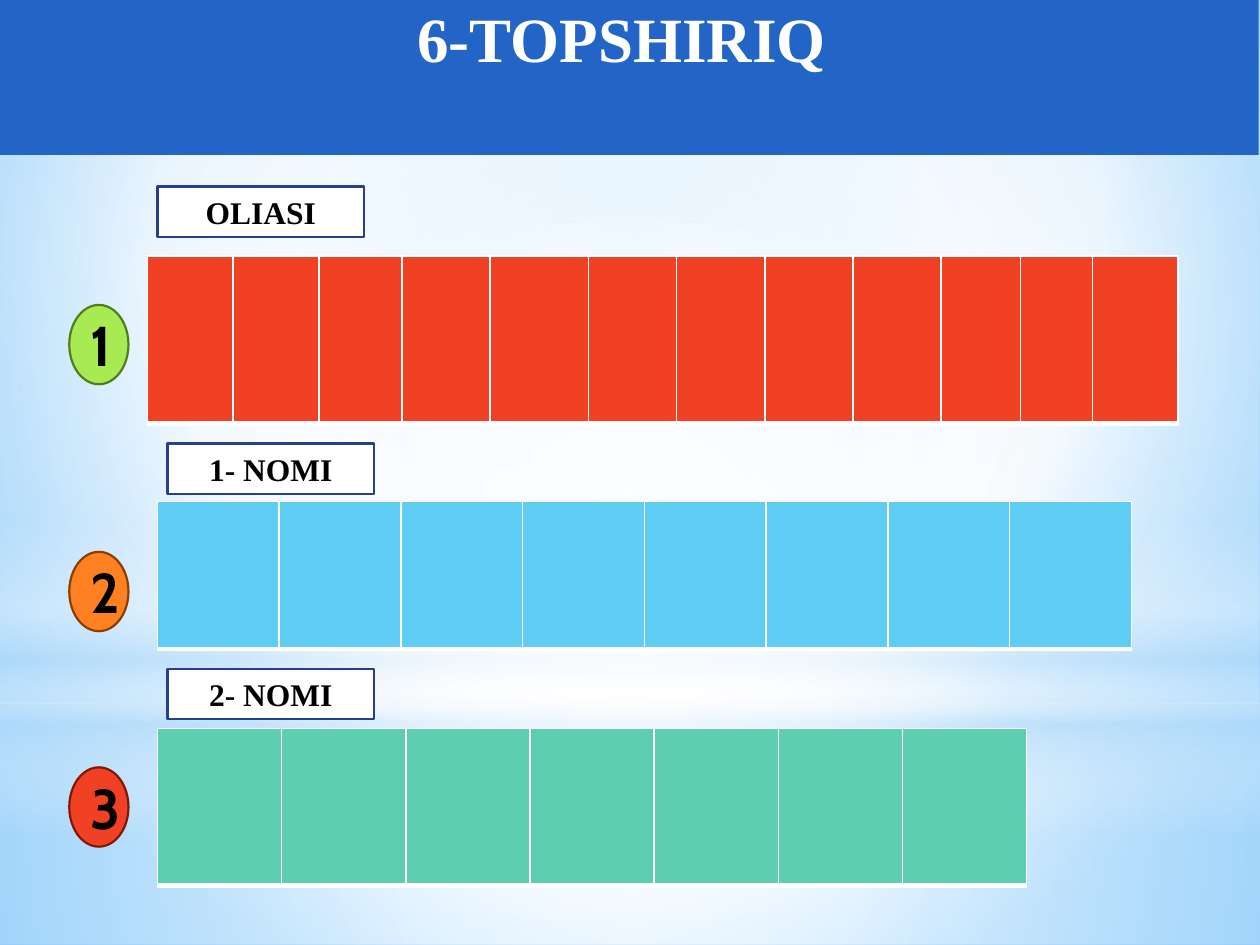
from dataclasses import dataclass

import lxml.etree
import pptx
import pptx.dml.color
import pptx.enum.shapes
import pptx.enum.text
import pptx.oxml
import pptx.oxml.ns
import pptx.util
from pptx.util import Inches

SHAPES = pptx.enum.shapes.MSO_SHAPE
MIDDLE = pptx.enum.text.MSO_ANCHOR.MIDDLE
TOP = pptx.enum.text.MSO_ANCHOR.TOP
NAMESPACE = pptx.oxml.ns.nsdecls("a")


@dataclass(frozen=True)
class Theme:
    serif: str = "Times New Roman"
    number_font: str = "Cabin"
    title_size: int = 36
    number_size: int = 32
    label_size: int = 18
    outline_width: float = 1.25
    banner: str = "2365C7"
    white: str = "FFFFFF"
    black: str = "000000"
    haze: str = "B4DCFA"
    label_line: str = "2A3E8E"
    sky: str = "9ED5FF"
    deep_sky: str = "5BB9FF"


THEME = Theme()


@dataclass(frozen=True)
class Box:
    left: float
    top: float
    width: float
    height: float

    def lengths(self) -> tuple:
        return tuple(Inches(n) for n in (self.left, self.top, self.width, self.height))


@dataclass(frozen=True)
class Stop:
    position: int
    color: str
    opacity: int = 100


@dataclass(frozen=True)
class Glow:
    kind: object
    box: Box
    stops: tuple
    direction: str


@dataclass(frozen=True)
class Task:
    label: str
    label_left: float
    label_top: float
    number: str
    number_top: float
    number_fill: str
    number_line: str
    grid: Box
    grid_fill: str
    columns: tuple


def circle(left: int, top: int, right: int, bottom: int) -> str:
    """Direction of a circular gradient, given its focus as percentages."""
    return (f'<a:path path="circle"><a:fillToRect l="{left * 1000}" t="{top * 1000}" '
            f'r="{right * 1000}" b="{bottom * 1000}"/></a:path>')


CENTERED = circle(50, 50, 50, 50)
DOWNWARD = '<a:lin ang="5400000" scaled="0"/>'

GLOWS = (
    Glow(SHAPES.RECTANGLE, Box(0, 5.58, 10, 1.92),
         (Stop(0, THEME.white, 91), Stop(37, THEME.white, 76), Stop(100, THEME.haze, 79)), CENTERED),
    Glow(SHAPES.RECTANGLE, Box(0, 0, 10, 5.58),
         (Stop(0, THEME.white, 89), Stop(48, THEME.white, 62), Stop(100, THEME.haze, 79)), CENTERED),
    Glow(SHAPES.RECTANGLE, Box(0, 4.12, 10, 2.5),
         (Stop(0, THEME.white, 0), Stop(29, THEME.white, 30), Stop(45, THEME.haze, 40),
          Stop(55, THEME.white, 26), Stop(65, THEME.haze, 60), Stop(100, THEME.white, 0)), DOWNWARD),
    Glow(SHAPES.OVAL, Box(0, 1.75, 10, 5.58),
         (Stop(0, THEME.white), Stop(56, THEME.white, 0)), CENTERED),
)

TASKS = (
    Task("OLIASI", 1.25, 1.48, "1", 2.42, "A7EA52", "537C1F", Box(1.17, 2.03, 8.2, 1.33), "F14124",
         (0.68, 0.68, 0.66, 0.7, 0.78, 0.7, 0.7, 0.7, 0.7, 0.63, 0.57, 0.68)),
    Task("1- NOMI", 1.33, 3.52, "2", 4.38, "FF8021", "8B3D02", Box(1.25, 3.98, 7.73, 1.17), "5ECCF3",
         (7.73 / 8,) * 8),
    Task("2- NOMI", 1.33, 5.31, "3", 6.09, "F14124", "821705", Box(1.25, 5.78, 6.9, 1.25), "5DCEAF",
         (6.9 / 7,) * 7),
)


def rgb(color: str) -> pptx.dml.color.RGBColor:
    return pptx.dml.color.RGBColor.from_string(color)


def apply_gradient(fill, owner, stops: tuple, direction: str) -> None:
    """Put a gradient with transparency in place of the owner's solid fill."""
    fill.solid()
    solid = owner.find(".//" + pptx.oxml.ns.qn("a:solidFill"))
    stop_xml = "".join(
        f'<a:gs pos="{stop.position * 1000}"><a:srgbClr val="{stop.color}">'
        f'<a:alpha val="{stop.opacity * 1000}"/></a:srgbClr></a:gs>' for stop in stops)
    gradient = pptx.oxml.parse_xml(
        f'<a:gradFill {NAMESPACE} rotWithShape="1"><a:gsLst>{stop_xml}</a:gsLst>{direction}</a:gradFill>')
    solid.getparent().replace(solid, gradient)


def add_glow(slide, glow: Glow) -> None:
    shape = slide.shapes.add_shape(glow.kind, *glow.box.lengths())
    shape.shadow.inherit = False
    shape.line.fill.background()
    apply_gradient(shape.fill, shape.element.spPr, glow.stops, glow.direction)


def add_text_shape(slide, kind, box: Box, text: str, fill: str, line: str | None,
                   font_name: str, size: int, color: str, anchor):
    shape = slide.shapes.add_shape(kind, *box.lengths())
    shape.shadow.inherit = False
    shape.fill.solid()
    shape.fill.fore_color.rgb = rgb(fill)
    if line is None:
        shape.line.fill.background()
    else:
        shape.line.color.rgb = rgb(line)
        shape.line.width = pptx.util.Pt(THEME.outline_width)
    frame = shape.text_frame
    frame.text = text
    frame.vertical_anchor = anchor
    paragraph = frame.paragraphs[0]
    paragraph.alignment = pptx.enum.text.PP_ALIGN.CENTER
    paragraph.font.name = font_name
    paragraph.font.size = pptx.util.Pt(size)
    paragraph.font.bold = True
    paragraph.font.color.rgb = rgb(color)
    return shape


def add_banner(slide) -> None:
    banner = add_text_shape(slide, SHAPES.RECTANGLE, Box(0, 0, 9.99, 1.23), "6-TOPSHIRIQ ",
                            THEME.banner, None, THEME.serif, THEME.title_size, THEME.white, TOP)
    frame = banner.text_frame
    frame.margin_left = frame.margin_top = frame.margin_right = frame.margin_bottom = 0


def set_borders(cell) -> None:
    properties = cell._tc.get_or_add_tcPr()
    for index, (side, points) in enumerate((("L", 1), ("R", 1), ("T", 1), ("B", 3))):
        properties.insert(index, pptx.oxml.parse_xml(
            f'<a:ln{side} {NAMESPACE} w="{pptx.util.Pt(points)}"><a:solidFill>'
            f'<a:srgbClr val="{THEME.white}"/></a:solidFill></a:ln{side}>'))


def add_grid(slide, task: Task) -> None:
    table = slide.shapes.add_table(1, len(task.columns), *task.grid.lengths()).table
    for column, width in zip(table.columns, task.columns):
        column.width = Inches(width)
    for cell in table.iter_cells():
        cell.fill.solid()
        cell.fill.fore_color.rgb = rgb(task.grid_fill)
        set_borders(cell)


def add_task(slide, task: Task) -> None:
    add_grid(slide, task)
    add_text_shape(slide, SHAPES.OVAL, Box(0.55, task.number_top, 0.47, 0.63), task.number,
                   task.number_fill, task.number_line, THEME.number_font, THEME.number_size,
                   THEME.black, MIDDLE)
    label = add_text_shape(slide, SHAPES.RECTANGLE, Box(task.label_left, task.label_top, 1.64, 0.4),
                           task.label, THEME.white, THEME.label_line, THEME.serif,
                           THEME.label_size, THEME.black, TOP)
    label.text_frame.auto_size = pptx.enum.text.MSO_AUTO_SIZE.SHAPE_TO_FIT_TEXT


def main() -> None:
    presentation = pptx.Presentation()
    presentation.slide_width, presentation.slide_height = Inches(10), Inches(7.5)
    slide = presentation.slides.add_slide(presentation.slide_layouts[6])
    sky = (Stop(0, THEME.sky), Stop(60, THEME.white), Stop(100, THEME.deep_sky))
    apply_gradient(slide.background.fill, slide.element, sky, circle(20, 10, 20, 60))
    for glow in GLOWS:
        add_glow(slide, glow)
    add_banner(slide)
    for task in TASKS:
        add_task(slide, task)
    presentation.save("out.pptx")


if __name__ == "__main__":
    main()
